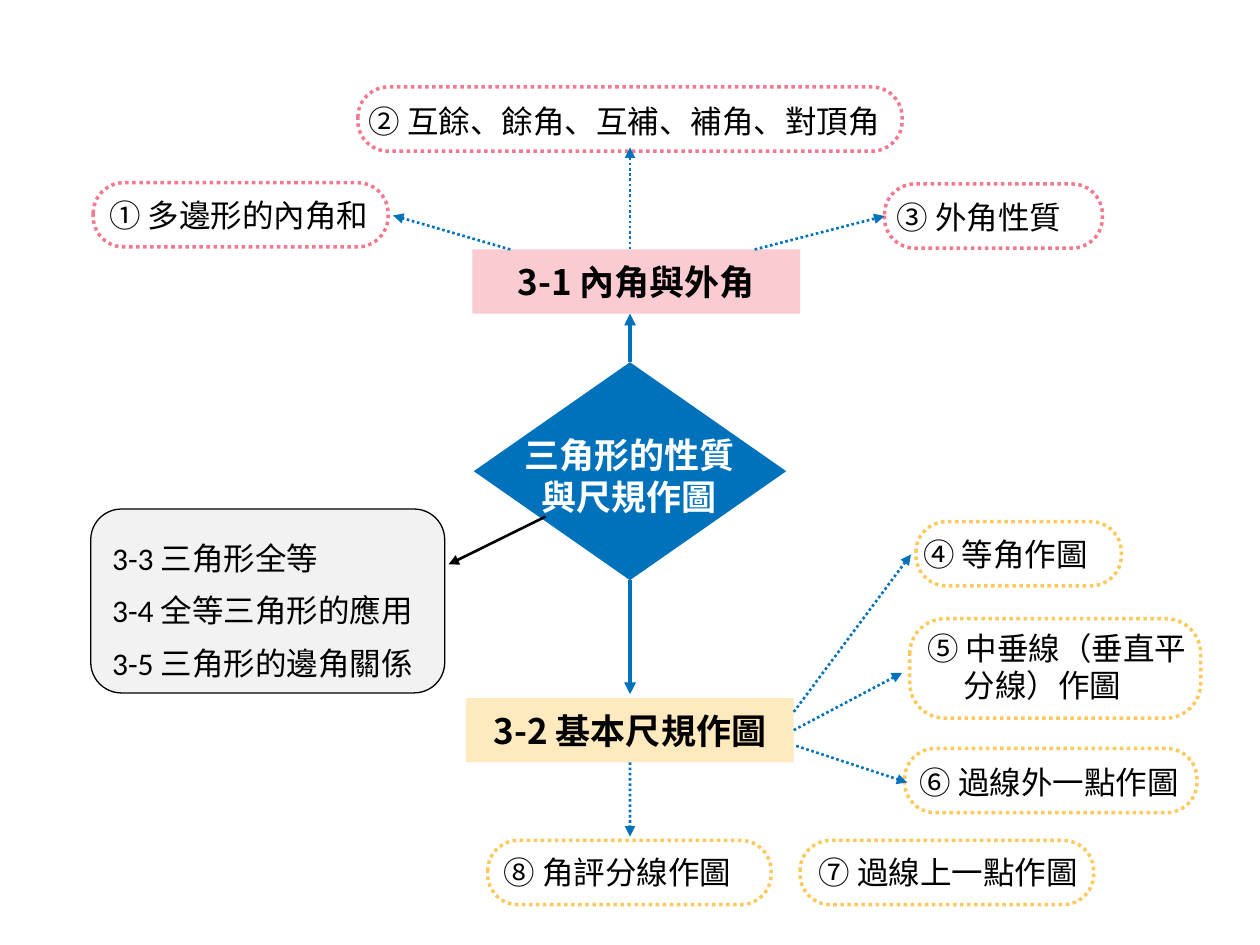
from lxml import etree
from pptx import Presentation
from pptx.dml.color import RGBColor
from pptx.enum.dml import MSO_LINE
from pptx.enum.shapes import MSO_CONNECTOR, MSO_SHAPE
from pptx.enum.text import MSO_ANCHOR, MSO_AUTO_SIZE, PP_ALIGN
from pptx.oxml.ns import qn
from pptx.util import Pt

LEFT, CENTER = PP_ALIGN.LEFT, PP_ALIGN.CENTER
TOP, MIDDLE = MSO_ANCHOR.TOP, MSO_ANCHOR.MIDDLE
DOTTED = MSO_LINE.ROUND_DOT
RECT, PILL, DIAMOND = MSO_SHAPE.RECTANGLE, MSO_SHAPE.ROUNDED_RECTANGLE, MSO_SHAPE.DIAMOND
SITE_TOP, SITE_LEFT, SITE_BOTTOM, SITE_RIGHT = range(4)

THEME = {
    "blue": "0072BC", "pink": "F2798F", "pale_pink": "FACCD2",
    "yellow": "FEC95B", "pale_yellow": "FFEABF", "gray": "F2F2F2",
    "black": "000000", "white": "FFFFFF",
    "latin": "Calibri", "cjk": "Noto Sans CJK SC",
    "heading": 20, "body": 18,
}

# Content; boxes are (left, top, width, height) in points
CORE = ("三角形的性質與尺規作圖", (270.72, 207, 178.56, 124.56), (290.16, 244.08, 138.96, 55.44))
SECTIONS = {
    "3-1": ("內角與外角", (270, 142.56, 187.2, 36.72), "pale_pink"),
    "3-2": ("基本尺規作圖", (266.4, 398.88, 187.2, 36.72), "pale_yellow"),
}
# number, topic, outline colour, outline box, text (left, top, width)
TOPICS = [
    ("①", "多邊形的內角和", "pink", (53.28, 104.4, 168.48, 36.72), (55.44, 108.72, 168.48)),
    ("②", "互餘、餘角、互補、補角、對頂角", "pink", (204.48, 49.68, 311.04, 36.72), (203.76, 54.72, 314.64)),
    ("③", "外角性質", "pink", (505.44, 105.12, 124.56, 36.72), (505.44, 109.44, 124.56)),
    ("④", "等角作圖", "yellow", (523.44, 298.08, 117.36, 36.72), (520.56, 302.4, 124.56)),
    ("⑤", "中垂線（垂直平分線）作圖", "yellow", (519.84, 353.52, 166.32, 56.88), (522.72, 355.68, 171.36)),
    ("⑥", "過線外一點作圖", "yellow", (516.96, 427.68, 167.04, 36.72), (518.4, 432.72, 171.36)),
    ("⑦", "過線上一點作圖", "yellow", (457.2, 480.24, 167.76, 36.72), (460.8, 483.84, 171.36)),
    ("⑧", "角評分線作圖", "yellow", (278.64, 480.24, 162, 36.72), (280.8, 483.84, 167.04)),
]
LATER_SECTIONS = [("3-3", "三角形全等"), ("3-4", "全等三角形的應用"), ("3-5", "三角形的邊角關係")]
LATER_BOX = (51.84, 290.88, 202.32, 105.12)
# start, end: each a point or a (part, connection site) pair
MAIN_ARROWS = [
    (("core", SITE_TOP), (360, 179.28)),
    (("core", SITE_BOTTOM), (360, 396.72)),
]
TOPIC_ARROWS = [
    ((291.6, 142.56), (224.64, 123.12)),
    ((360, 142.56), (360, 84.24)),
    ((431.28, 142.56), ("③", SITE_LEFT)),
    ((453.6, 406.8), (520.56, 316.8)),
    (("3-2", SITE_RIGHT), (515.52, 384.48)),
    ((455.04, 426.24), (518.4, 447.12)),
    (("3-2", SITE_BOTTOM), (360, 478.08)),
]
LATER_ARROW = ((311.76, 295.2), (256.32, 322.56))

prs = Presentation()
prs.slide_width, prs.slide_height = Pt(720), Pt(540)
slide = prs.slides.add_slide(prs.slide_layouts[6])
parts = {}


def rgb(name):
    return RGBColor.from_string(THEME[name])


def add_part(kind, box, fill=None, line=None, width=1, dash=None, radius=None):
    part = slide.shapes.add_shape(kind, *map(Pt, box))
    part.shadow.inherit = False
    if radius:
        part.adjustments[0] = radius / min(box[2:])
    if fill:
        part.fill.solid()
        part.fill.fore_color.rgb = rgb(fill)
    else:
        part.fill.background()
    if line:
        part.line.color.rgb = rgb(line)
        part.line.width = Pt(width)
        if dash:
            part.line.dash_style = dash
    else:
        part.line.fill.background()
    return part


def write(holder, lines, size="body", color="black", bold=False, align=LEFT,
          anchor=TOP, spacing=None, hanging=0):
    """Fill a shape or text box; each line is a list of (text, font) runs."""
    frame = holder.text_frame
    frame.word_wrap = True
    frame.auto_size = MSO_AUTO_SIZE.NONE
    frame.vertical_anchor = anchor
    for index, runs in enumerate(lines):
        paragraph = frame.add_paragraph() if index else frame.paragraphs[0]
        paragraph.alignment = align
        if spacing:
            paragraph.line_spacing = Pt(spacing)
        if hanging:
            props = paragraph._p.get_or_add_pPr()
            props.set("marL", str(Pt(hanging)))
            props.set("indent", str(-Pt(hanging)))
        for text, font in runs:
            run = paragraph.add_run()
            run.text = text
            run.font.size, run.font.bold = Pt(THEME[size]), bold
            run.font.name = THEME[font]
            run.font.color.rgb = rgb(color)
            east_asian = etree.SubElement(run._r.get_or_add_rPr(), qn("a:ea"))
            east_asian.set("typeface", THEME["cjk"])


def add_text(box, lines, **style):
    write(slide.shapes.add_textbox(*map(Pt, box)), lines, **style)


def numbered(number, title):
    return [(number + " ", "latin"), (title, "cjk")]


def locate(end):
    return (0, 0) if end[0] in parts else end


def add_arrow(start, end, color="blue", width=1.5, dash=None):
    arrow = slide.shapes.add_connector(
        MSO_CONNECTOR.STRAIGHT, *map(Pt, locate(start) + locate(end)))
    if start[0] in parts:
        arrow.begin_connect(parts[start[0]], start[1])
    if end[0] in parts:
        arrow.end_connect(parts[end[0]], end[1])
    arrow.line.color.rgb = rgb(color)
    arrow.line.width = Pt(width)
    if dash:
        arrow.line.dash_style = dash
    head = etree.SubElement(arrow.line._get_or_add_ln(), qn("a:tailEnd"))
    head.set("type", "triangle")
    etree.SubElement(arrow._element.spPr, qn("a:effectLst"))


# Central diamond and the two section bars
core_title, core_box, core_text_box = CORE
parts["core"] = add_part(DIAMOND, core_box, fill="blue")
for number, (title, box, fill) in SECTIONS.items():
    parts[number] = add_part(RECT, box, fill=fill)
    write(parts[number], [[(f"{number} {title}", "cjk")]], size="heading",
          bold=True, align=CENTER, anchor=MIDDLE)

# Dotted topic outlines with their labels
for number, title, color, box, (left, top, width) in TOPICS:
    tall = box[3] > 40
    parts[number] = add_part(PILL, box, line=color, width=2, dash=DOTTED,
                             radius=20.1 if tall else 17.4)
    add_text((left, top, width, 51.12 if tall else 28.8),
             [numbered(number, title)], hanging=20.88 if tall else 0)

add_text(core_text_box, [[(core_title, "cjk")]], size="heading",
         color="white", bold=True, align=CENTER)

# Arrows to sections and topics
for start, end in MAIN_ARROWS:
    add_arrow(start, end, width=2.25)
for start, end in TOPIC_ARROWS:
    add_arrow(start, end, dash=DOTTED)

# Later sections
later = add_part(PILL, LATER_BOX, fill="gray", line="black", width=0.75)
write(later, [numbered(*section) for section in LATER_SECTIONS], spacing=30)
add_arrow(*LATER_ARROW, color="black")

prs.save("out.pptx")
